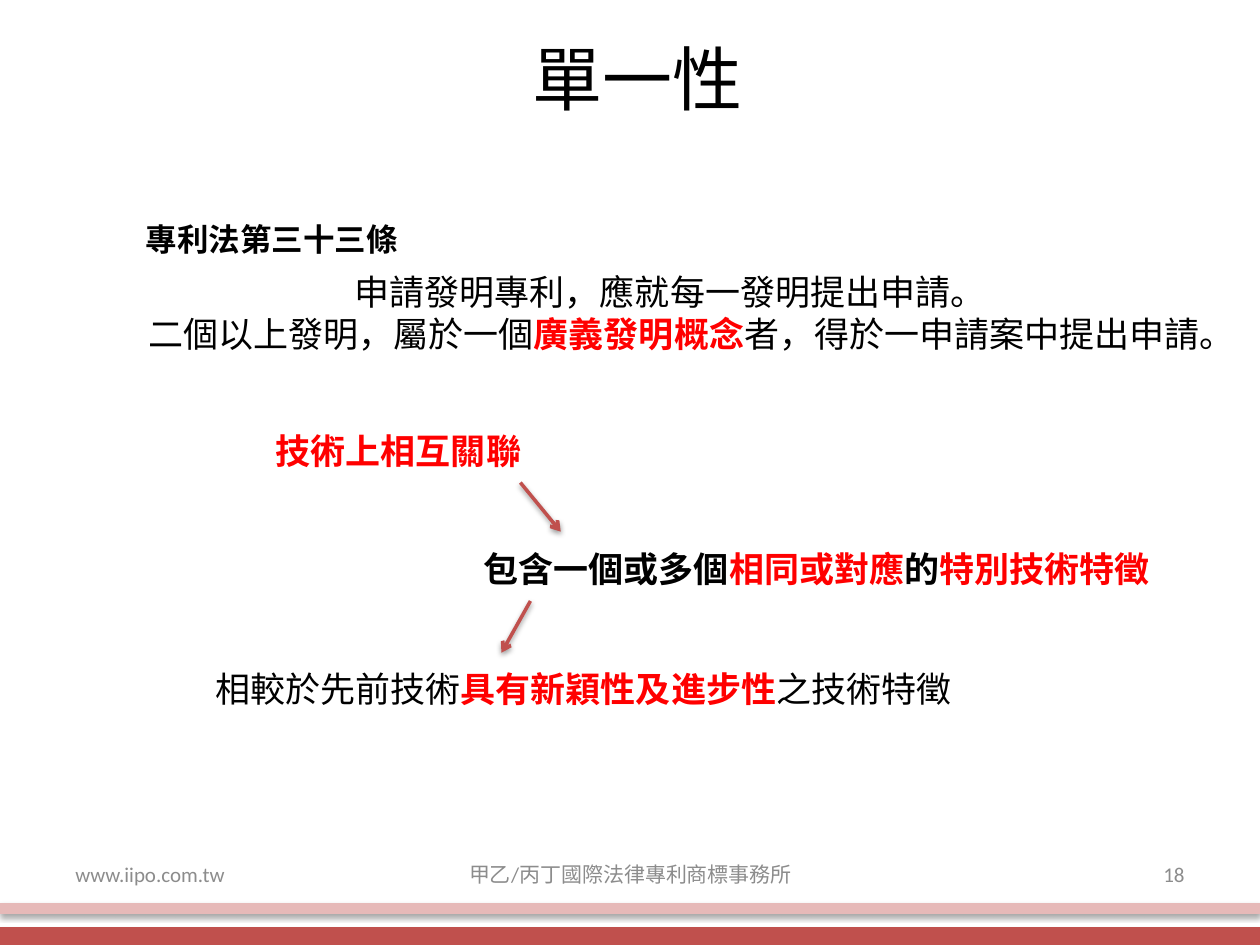
from dataclasses import dataclass

from lxml.etree import SubElement
from pptx import Presentation
from pptx.dml.color import RGBColor
from pptx.enum.shapes import MSO_CONNECTOR
from pptx.enum.text import MSO_ANCHOR, MSO_AUTO_SIZE, PP_ALIGN
from pptx.oxml.ns import qn
from pptx.util import Inches, Pt


@dataclass(frozen=True)
class Theme:
    """Colours, fonts and type sizes of the slide."""
    ink: str = "000000"
    accent: str = "FF0000"
    muted: str = "8C8C8C"
    bar: str = "C0504D"
    pale_bar: str = "E6B9B8"
    cjk: str = "Noto Sans CJK SC"
    latin: str = "Calibri"
    title: int = 40
    body: int = 20
    heading: int = 18
    footer: int = 12
    leading: float = 1.2


def add_run(p, text, font, size, color, bold=False):
    """Add one formatted run, with its font set for East Asian text as well."""
    r = p.add_run()
    r.text = text
    r.font.name = font
    r.font.size = Pt(size)
    r.font.bold = bold
    r.font.color.rgb = RGBColor.from_string(color)
    SubElement(r.font._element, qn("a:ea"), typeface=font)


class SlideBuilder:
    """Holds the theme and the current slide."""

    def __init__(self, prs, theme):
        """Start a title-only slide."""
        self.theme = theme
        self.s = prs.slides.add_slide(prs.slide_layouts[5])

    def fill(self, sp, lines, size, align=PP_ALIGN.LEFT, wrap=True):
        """Write lines of (text, colour, bold) runs into a shape."""
        tf = sp.text_frame
        tf.word_wrap = wrap
        tf.auto_size = MSO_AUTO_SIZE.SHAPE_TO_FIT_TEXT
        tf.vertical_anchor = MSO_ANCHOR.TOP
        for i, runs in enumerate(lines):
            p = tf.add_paragraph() if i else tf.paragraphs[0]
            p.alignment = align
            p.line_spacing = Pt(size * self.theme.leading)
            for text, color, bold in runs:
                add_run(p, text, self.theme.cjk, size, color, bold)

    def title(self, text, box):
        """Place and format the title placeholder."""
        sp = self.s.shapes.title
        sp.left, sp.top, sp.width, sp.height = map(Inches, box)
        self.fill(sp, [[(text, self.theme.ink, False)]], self.theme.title, PP_ALIGN.CENTER)

    def text(self, box, lines, size=None, **layout):
        """Add a text box in the body style."""
        sp = self.s.shapes.add_textbox(*map(Inches, box))
        self.fill(sp, lines, size or self.theme.body, **layout)

    def footer(self, text, left, width, align):
        """Add one part of the footer row."""
        sp = self.s.shapes.add_textbox(*map(Inches, (left, 6.74, width, 0.4)))
        tf = sp.text_frame
        tf.word_wrap = True
        tf.vertical_anchor = MSO_ANCHOR.MIDDLE
        p = tf.paragraphs[0]
        p.alignment = align
        add_run(p, text, self.theme.latin, self.theme.footer, self.theme.muted)

    def line(self, start, end, color, width, alpha=35, distance=1.8, arrow=False):
        """Add a line with a soft shadow below it and an optional arrowhead."""
        points = map(Inches, (*start, *end))
        sp = self.s.shapes.add_connector(MSO_CONNECTOR.STRAIGHT, *points)
        sp.line.color.rgb = RGBColor.from_string(color)
        sp.line.width = Pt(width)
        if arrow:
            SubElement(sp.line._get_or_add_ln(), qn("a:tailEnd"), type="arrow")
        effects = SubElement(sp._element.spPr, qn("a:effectLst"))
        shadow = SubElement(effects, qn("a:outerShdw"), blurRad=str(Pt(3.1)),
                            dist=str(Pt(distance)), dir="5400000", rotWithShape="0")
        black = SubElement(shadow, qn("a:srgbClr"), val=self.theme.ink)
        SubElement(black, qn("a:alpha"), val=str(alpha * 1000))


def main():
    """Build the slide on unity of invention."""
    prs = Presentation()
    prs.slide_width, prs.slide_height = Inches(10), Inches(7.5)
    t = Theme()
    b = SlideBuilder(prs, t)

    b.footer("www.iipo.com.tw", 0.5, 2.33, PP_ALIGN.LEFT)
    b.footer("甲乙/丙丁國際法律專利商標事務所", 3.42, 3.17, PP_ALIGN.CENTER)
    b.footer("18", 7.17, 2.33, PP_ALIGN.RIGHT)
    for y, color, width in ((7.45, t.bar, 13), (7.21, t.pale_bar, 6)):
        b.line((0, y), (10, y), color, width)

    b.title(" 單一性", (2.56, 0.23, 4.88, 0.77))
    b.text((1.06, 1.7, 2.22, 0.4), [[("專利法第三十三條", t.ink, True)]],
           size=t.heading, wrap=False)
    b.text((1.06, 2.1, 8.58, 0.77), [
        [("申請發明專利，應就每一發明提出申請。 ", t.ink, False)],
        [("二個以上發明，屬於一個", t.ink, False),
         ("廣義發明概念", t.accent, True),
         ("者，得於一申請案中提出申請。", t.ink, False)],
    ], align=PP_ALIGN.CENTER)
    b.text((2.09, 3.36, 2.17, 0.44), [[("技術上相互關聯", t.accent, True)]], wrap=False)
    b.text((3.74, 4.3, 5.53, 0.44), [[
        ("包含一個或多個", t.ink, True),
        ("相同或對應", t.accent, True),
        ("的", t.ink, True),
        ("特別技術特徵", t.accent, True),
    ]], wrap=False)
    b.text((1.61, 5.25, 6.14, 0.44), [[
        ("相較於先前技術", t.ink, False),
        ("具有新穎性及進步性", t.accent, True),
        ("之技術特徵", t.ink, False),
    ]])
    for start, end in (((4.13, 3.83), (4.45, 4.22)), ((4.21, 4.77), (3.98, 5.18))):
        b.line(start, end, t.bar, 2, alpha=38, distance=1.6, arrow=True)

    prs.save("out.pptx")


if __name__ == "__main__":
    main()
